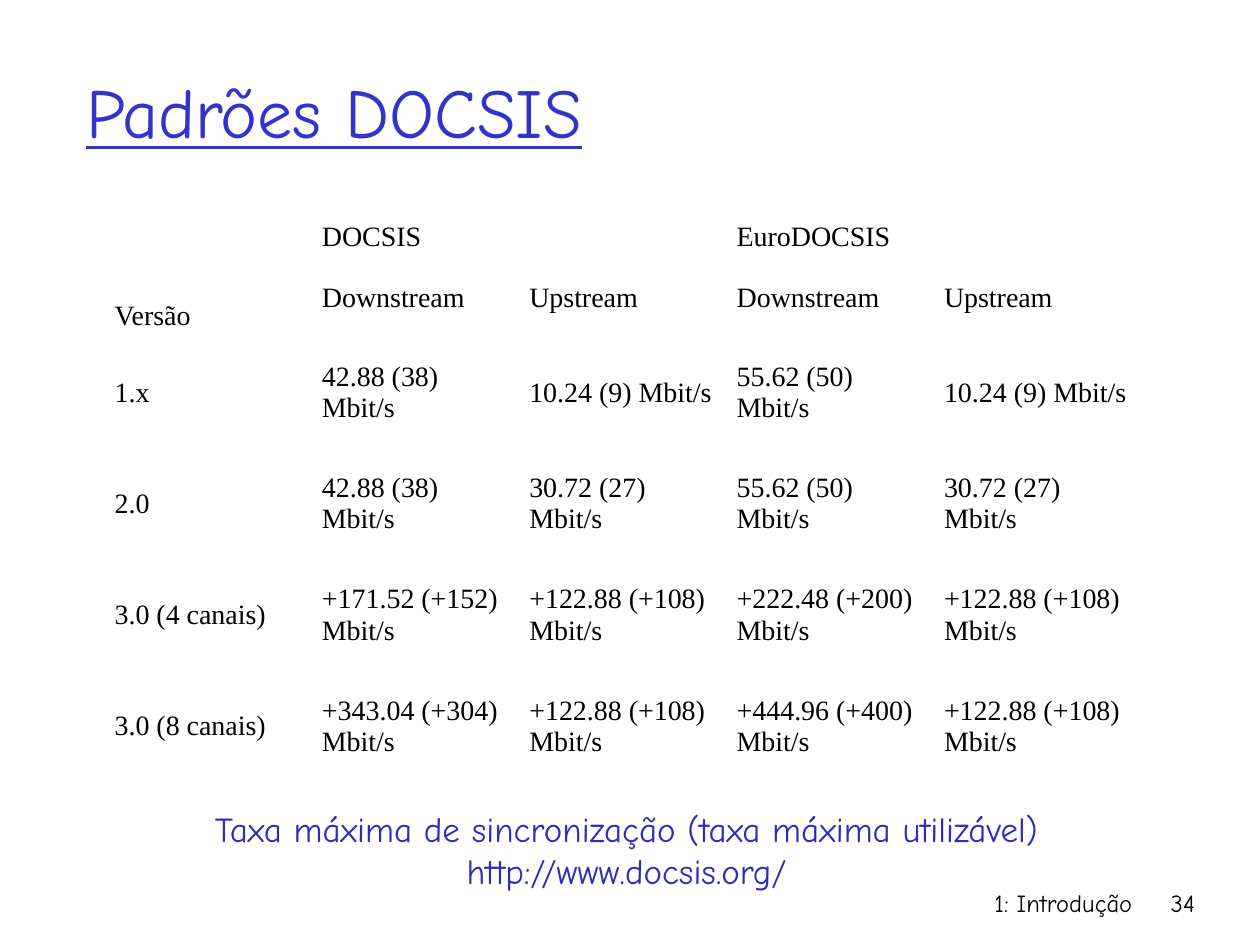
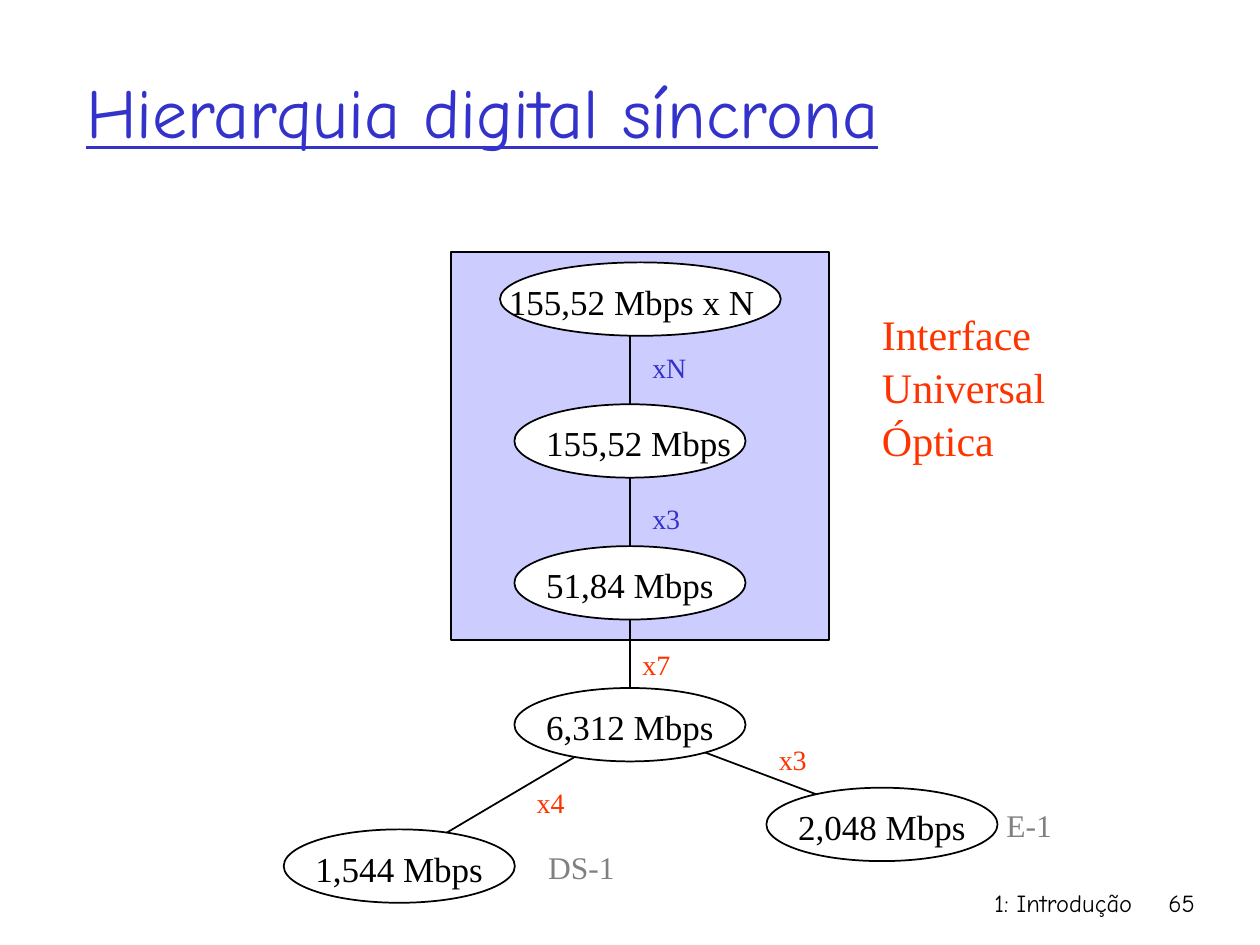
"""Builds two slides: DOCSIS standards and the synchronous digital hierarchy."""
import pptx
import pptx.dml.color
import pptx.enum.shapes
import pptx.enum.text
import pptx.util
from lxml import etree

Cm, Pt = pptx.util.Cm, pptx.util.Pt
SHAPE = pptx.enum.shapes.MSO_SHAPE
ANCHOR = pptx.enum.text.MSO_ANCHOR
ALIGN = pptx.enum.text.PP_ALIGN
A = "http://schemas.openxmlformats.org/drawingml/2006/main"
COMIC, TIMES = "Comic Neue", "Times New Roman"
BLACK, WHITE, GREY = "000000", "FFFFFF", "808080"
BLUE, DARK_BLUE, LILAC, RED = "3333CC", "2D2DB9", "CCCCFF", "FF3300"


def rgb(value):
    return pptx.dml.color.RGBColor.from_string(value)


def add_text(s, lines, left, top, width, height, size, color=BLACK,
             name=TIMES, align=ALIGN.LEFT, spacing=1.05):
    tf = s.shapes.add_textbox(Cm(left), Cm(top), Cm(width), Cm(height)).text_frame
    tf.word_wrap = False
    tf.text = lines
    for p in tf.paragraphs:
        p.alignment, p.line_spacing = align, spacing
        p.font.size, p.font.name = Pt(size), name
        p.font.color.rgb = rgb(color)


prs = pptx.Presentation()
prs.slide_width, prs.slide_height = Cm(25.4), Cm(19.05)

slides = []
for title, number in [("Padrões DOCSIS", "34"), ("Hierarquia digital síncrona", "65")]:
    s = prs.slides.add_slide(prs.slide_layouts[5])
    sp = s.shapes.title
    sp.left, sp.top, sp.width, sp.height = Cm(1.48), Cm(0.64), Cm(21.59), Cm(3.18)
    tf = sp.text_frame
    tf.text = title
    tf.vertical_anchor = ANCHOR.MIDDLE
    p = tf.paragraphs[0]
    p.alignment = ALIGN.LEFT
    p.font.size, p.font.name, p.font.underline = Pt(40), COMIC, True
    p.font.color.rgb = rgb(BLUE)
    for text, left, width in [("1: Introdução", 15.03, 8.05), (number, 23.07, 1.27)]:
        add_text(s, text, left, 17.78, width, 1.27, 14, name=COMIC,
                 align=ALIGN.RIGHT, spacing=1)
    slides.append(s)
standards, hierarchy = slides

rows = [
    ["Versão", "DOCSIS", "", "EuroDOCSIS", ""],
    ["", "Downstream", "Upstream", "Downstream", "Upstream"],
    ["1.x", "42.88 (38) Mbit/s", "10.24 (9) Mbit/s", "55.62 (50) Mbit/s", "10.24 (9) Mbit/s"],
    ["2.0", "42.88 (38) Mbit/s", "30.72 (27) Mbit/s", "55.62 (50) Mbit/s", "30.72 (27) Mbit/s"],
    ["3.0 (4 canais)", "+171.52 (+152) Mbit/s", "+122.88 (+108) Mbit/s",
     "+222.48 (+200) Mbit/s", "+122.88 (+108) Mbit/s"],
    ["3.0 (8 canais)", "+343.04 (+304) Mbit/s", "+122.88 (+108) Mbit/s",
     "+444.96 (+400) Mbit/s", "+122.88 (+108) Mbit/s"],
]
table = standards.shapes.add_table(6, 5, Cm(2.08), Cm(4.32), Cm(20.9), Cm(11.43)).table
table.first_row = table.horz_banding = False
for column in table.columns:
    column.width = Cm(4.18)
for row, height in zip(table.rows, [0.89, 1.58] + [2.24] * 4):
    row.height = Cm(height)
for i, values in enumerate(rows):
    for j, value in enumerate(values):
        cell = table.cell(i, j)
        cell.text = value
        cell.fill.background()
        cell.margin_left = cell.margin_right = Cm(0.23)
        cell.margin_top = cell.margin_bottom = Cm(0.11)
        cell.vertical_anchor = ANCHOR.MIDDLE
        p = cell.text_frame.paragraphs[0]
        p.font.size, p.font.name = Pt(16), TIMES
        p.font.color.rgb = rgb(BLACK)
table.cell(0, 0).vertical_anchor = ANCHOR.BOTTOM
table.cell(0, 0).merge(table.cell(1, 0))
table.cell(0, 1).merge(table.cell(0, 2))
table.cell(0, 3).merge(table.cell(0, 4))

add_text(standards, "Taxa máxima de sincronização (taxa máxima utilizável)\nhttp://www.docsis.org/",
         3.35, 16.15, 18.57, 1.96, 20, DARK_BLUE, COMIC, ALIGN.CENTER, 1)

s = hierarchy
sp = s.shapes.add_shape(SHAPE.RECTANGLE, Cm(9.1), Cm(5.08), Cm(7.62), Cm(7.83))
sp.shadow.inherit = False
sp.fill.solid()
sp.fill.fore_color.rgb = rgb(LILAC)
sp.line.color.rgb = rgb(BLACK)
sp.line.width = Pt(1)

for x1, y1, x2, y2 in [(12.7, 6.15, 12.7, 14.4), (12.7, 14.6, 17.78, 16.51),
                       (8.05, 17.35, 12.7, 14.6)]:
    line = s.shapes.add_connector(pptx.enum.shapes.MSO_CONNECTOR.STRAIGHT,
                                  Cm(x1), Cm(y1), Cm(x2), Cm(y2))
    line.line.color.rgb = rgb(BLACK)
    line.line.width = Pt(1)
    etree.SubElement(line._element.spPr, f"{{{A}}}effectLst")

rate_top, rate_step = 5.29, 2.86
rates = [("155,52 Mbps x N", 10.08, rate_top, 5.66, -0.07, 5.46)]
for i, rate in enumerate(["155,52 Mbps", "51,84 Mbps", "6,312 Mbps"], 1):
    rates.append((rate, 10.37, rate_top + i * rate_step, 4.66, 0.39, 4.24 if i == 1 else 3.89))
rates += [("1,544 Mbps", 5.72, 16.72, 4.66, 0.39, 3.89),
          ("2,048 Mbps", 15.45, 15.88, 4.66, 0.39, 3.89)]
for rate, left, top, width, indent, text_width in rates:
    sp = s.shapes.add_shape(SHAPE.OVAL, Cm(left), Cm(top), Cm(width), Cm(1.48))
    sp.shadow.inherit = False
    sp.fill.solid()
    sp.fill.fore_color.rgb = rgb(WHITE)
    sp.line.color.rgb = rgb(BLACK)
    sp.line.width = Pt(1)
    add_text(s, rate, left + indent, top + 0.19, text_width, 1.09, 20)

for factor, left, top, color in [("xN", 12.9, 6.91, BLUE), ("x3", 12.9, 9.96, BLUE),
                                 ("x7", 12.7, 12.9, RED), ("x4", 10.57, 15.67, RED),
                                 ("x3", 15.45, 14.81, RED)]:
    add_text(s, factor, left, top, 1.19 if factor == "xN" else 1.07, 0.94, 16, color)

add_text(s, "DS-1", 10.8, 16.94, 1.85, 1.02, 18, GREY)
add_text(s, "E-1", 20.04, 16.08, 1.42, 1.02, 18, GREY)
add_text(s, "Interface\nUniversal\nÓptica", 17.53, 6.05, 3.81, 3.3, 24, RED)

prs.save("out.pptx")
